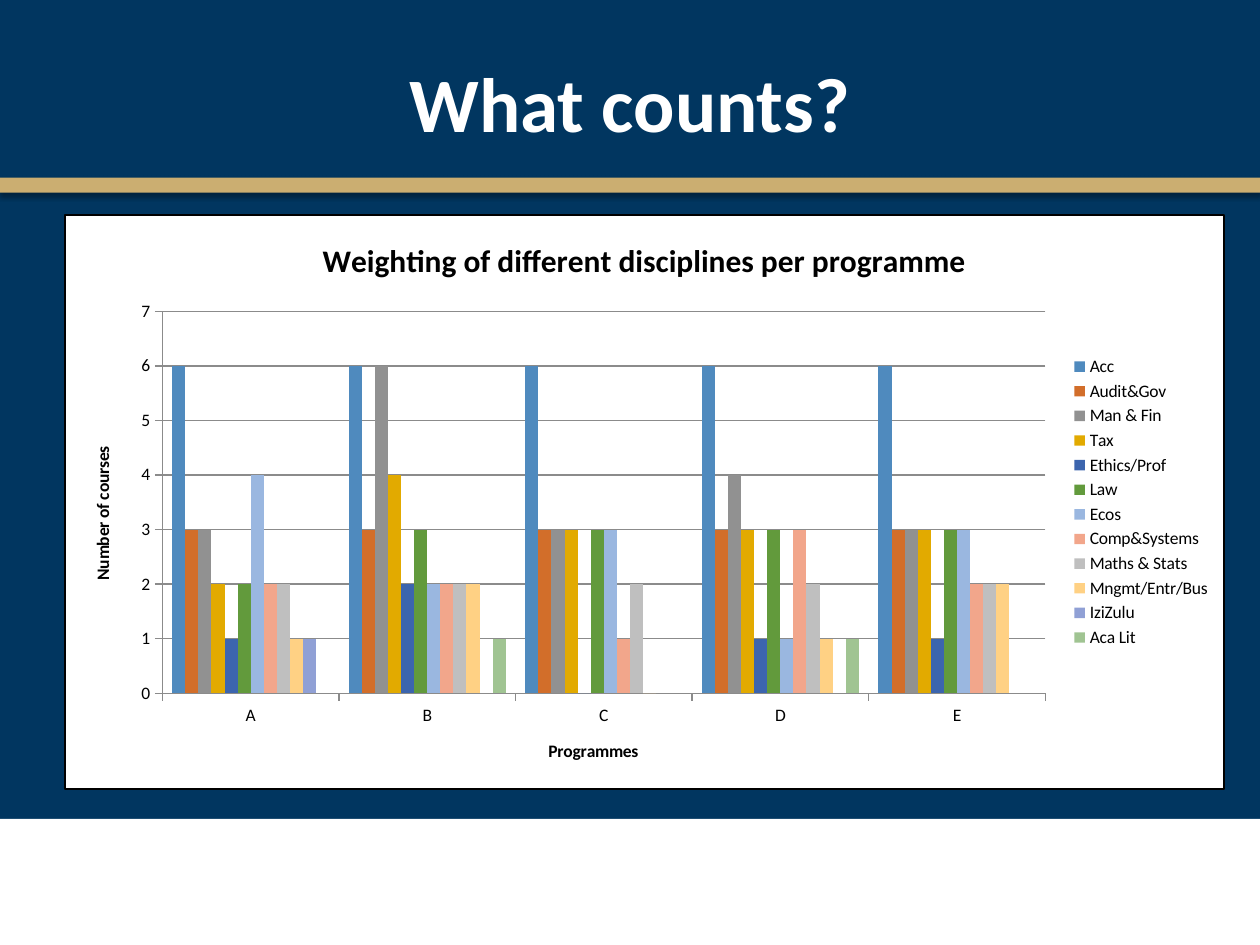
from lxml import etree
from pptx import Presentation
from pptx.chart.data import CategoryChartData
from pptx.dml.color import RGBColor
from pptx.enum.chart import XL_CHART_TYPE, XL_LEGEND_POSITION, XL_TICK_MARK
from pptx.enum.shapes import MSO_SHAPE
from pptx.enum.text import MSO_ANCHOR, PP_ALIGN
from pptx.oxml import parse_xml
from pptx.oxml.ns import nsdecls, qn
from pptx.util import Inches, Pt

COLUMNS = XL_CHART_TYPE.COLUMN_CLUSTERED
LEGEND_RIGHT = XL_LEGEND_POSITION.RIGHT
TICK_OUT = XL_TICK_MARK.OUTSIDE
RECT = MSO_SHAPE.RECTANGLE
MIDDLE = MSO_ANCHOR.MIDDLE
CENTER = PP_ALIGN.CENTER

FONT = "Calibri"
NAVY, GOLD, WHITE, BLACK, GRAY = "013660", "CBAE71", "FFFFFF", "000000", "8B8B8B"
PROGRAMMES = ["A", "B", "C", "D", "E"]
DISCIPLINES = [
    ("Acc", "4F8ABE", [6, 6, 6, 6, 6]),
    ("Audit&Gov", "D26E2A", [3, 3, 3, 3, 3]),
    ("Man & Fin", "919191", [3, 6, 3, 4, 3]),
    ("Tax", "E2AA00", [2, 4, 3, 3, 3]),
    ("Ethics/Prof", "3C65AE", [1, 2, 0, 1, 1]),
    ("Law", "629A3C", [2, 3, 3, 3, 3]),
    ("Ecos", "9AB7E0", [4, 2, 3, 1, 3]),
    ("Comp&Systems", "F2A68B", [2, 2, 1, 3, 2]),
    ("Maths & Stats", "BFBFBF", [2, 2, 2, 2, 2]),
    ("Mngmt/Entr/Bus", "FFD184", [1, 2, 0, 1, 2]),
    ("IziZulu", "90A0D5", [1, None, None, None, None]),
    ("Aca Lit", "A0C492", [None, 1, None, 1, None]),
]


def rgb(color):
    return RGBColor.from_string(color)


def set_font(font, size, color, bold=False):
    font.name = FONT
    font.size = Pt(size)
    font.bold = bold
    font.color.rgb = rgb(color)


def add_band(s, top, height, color):
    sp = s.shapes.add_shape(RECT, 0, Inches(top), Inches(10), Inches(height))
    sp.shadow.inherit = False
    sp.fill.solid()
    sp.fill.fore_color.rgb = rgb(color)
    sp.line.fill.background()
    return sp


def add_shadow(sp):
    effects = sp._element.spPr.find(qn("a:effectLst"))
    shadow = etree.SubElement(
        effects, qn("a:outerShdw"), blurRad=str(Pt(3.1)), dist=str(Pt(1.8)),
        dir="5400000", rotWithShape="0")
    color = etree.SubElement(shadow, qn("a:srgbClr"), val=BLACK)
    etree.SubElement(color, qn("a:alpha"), val="35000")


def add_title(s, text):
    sp = s.shapes.add_textbox(Inches(0.69), Inches(0.4), Inches(8.62), Inches(0.91))
    tf = sp.text_frame
    tf.word_wrap = True
    tf.vertical_anchor = MIDDLE
    p = tf.paragraphs[0]
    p.text = text
    p.alignment = CENTER
    p.line_spacing = 0.9
    set_font(p.font, 44, WHITE, True)


def set_chart_title(owner, text, size):
    p = owner.text_frame.paragraphs[0]
    p.text = text
    set_font(p.font, size, BLACK, True)


def style_axis(axis, title):
    set_chart_title(axis.axis_title, title, 10)
    axis.major_tick_mark = TICK_OUT
    axis.format.line.color.rgb = rgb(GRAY)


def frame_chart(chart):
    chart._chartSpace.find(qn("c:chart")).addnext(parse_xml(
        f'<c:spPr {nsdecls("c", "a")}>'
        f'<a:solidFill><a:srgbClr val="{WHITE}"/></a:solidFill>'
        f'<a:ln w="{Pt(1)}"><a:solidFill><a:srgbClr val="{BLACK}"/></a:solidFill></a:ln>'
        '</c:spPr>'))


def place_plot(chart, x, y, w, h):
    area = chart._chartSpace.find(".//" + qn("c:plotArea"))
    for old in area.findall(qn("c:layout")):
        area.remove(old)
    layout = etree.Element(qn("c:layout"))
    manual = etree.SubElement(layout, qn("c:manualLayout"))
    settings = [("layoutTarget", "inner"), ("xMode", "edge"), ("yMode", "edge"),
                ("x", x), ("y", y), ("w", w), ("h", h)]
    for tag, value in settings:
        etree.SubElement(manual, qn(f"c:{tag}"), val=str(value))
    area.insert(0, layout)


def add_discipline_chart(s):
    data = CategoryChartData()
    data.categories = PROGRAMMES
    for name, _, values in DISCIPLINES:
        data.add_series(name, values)
    chart = s.shapes.add_chart(
        COLUMNS, Inches(0.51), Inches(1.7), Inches(9.21), Inches(4.57), data).chart
    set_font(chart.font, 10, BLACK)
    set_chart_title(chart.chart_title, "Weighting of different disciplines per programme", 18)
    chart.has_legend = True
    chart.legend.position = LEGEND_RIGHT
    chart.legend.include_in_layout = False
    style_axis(chart.category_axis, "Programmes")
    style_axis(chart.value_axis, "Number of courses")
    chart.value_axis.minimum_scale = 0
    chart.value_axis.maximum_scale = 7
    chart.value_axis.major_unit = 1
    chart.value_axis.major_gridlines.format.line.color.rgb = rgb(GRAY)
    plot = chart.plots[0]
    plot.gap_width = 150
    plot.vary_by_categories = False
    for series, (_, color, _) in zip(plot.series, DISCIPLINES):
        series.format.fill.solid()
        series.format.fill.fore_color.rgb = rgb(color)
    frame_chart(chart)
    place_plot(chart, 0.084, 0.168, 0.762, 0.665)


def main():
    prs = Presentation()
    prs.slide_width = Inches(10)
    prs.slide_height = Inches(7.5)
    s = prs.slides.add_slide(prs.slide_layouts[6])
    s.background.fill.solid()
    s.background.fill.fore_color.rgb = rgb(NAVY)
    add_band(s, 6.5, 1, WHITE)
    add_shadow(add_band(s, 1.41, 0.12, GOLD))
    add_title(s, "What counts?")
    add_discipline_chart(s)
    prs.save("out.pptx")


if __name__ == "__main__":
    main()
